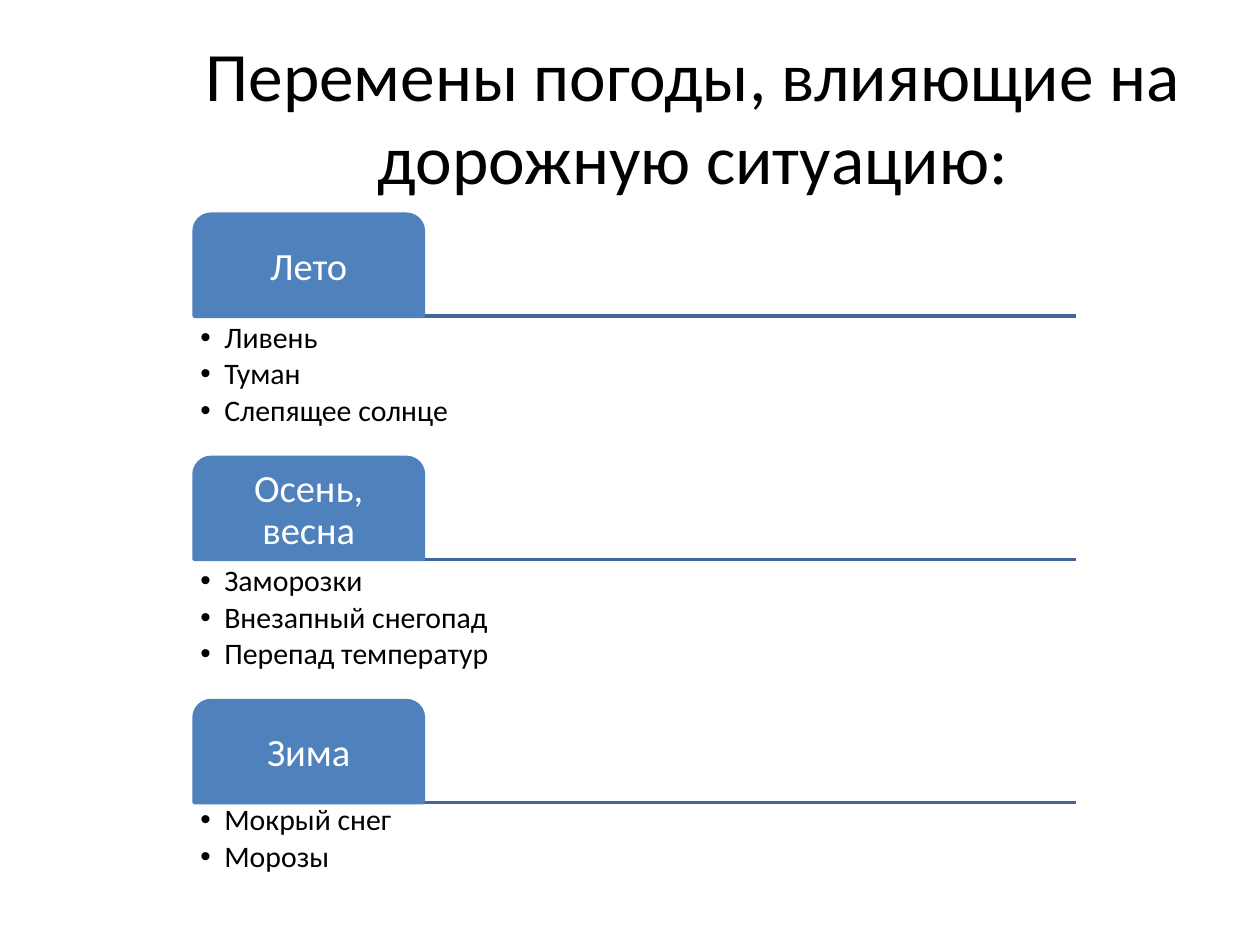
import pptx
import pptx.util
import pptx.dml.color
import pptx.enum.shapes
import pptx.enum.text
import pptx.oxml.xmlchemy
from lxml import etree
from pptx.oxml import ns

Inches, Pt = pptx.util.Inches, pptx.util.Pt
Color = pptx.dml.color.RGBColor.from_string
Align, Anchor = pptx.enum.text.PP_ALIGN, pptx.enum.text.MSO_ANCHOR

THEME = {
    "font": "Calibri", "text": "000000", "label": "FFFFFF",
    "tab": "4F81BD", "rule": "3F6797",
    "title_size": 39.6, "label_size": 22, "list_size": 17, "line": 2,
}

# Grid: one row per season, in inches
LEFT, TOP, ROW = 1.54, 1.7, 1.93
TAB_WIDTH, TAB_HEIGHT, RULE_WIDTH = 1.82, 0.81, 7
INSET, INDENT = 0.05, 0.19

# Label, list items, list width, list height, list shift from the rule
SEASONS = [
    ("Лето", ["Ливень", "Туман", "Слепящее солнце"], 7.01, 1.06, 0),
    ("Осень, весна", ["Заморозки", "Внезапный снегопад", "Перепад температур"], 7.01, 1.09, 0),
    ("Зима", ["Мокрый снег", "Морозы"], 6.38, 1, -0.03),
]


def place(shape, left, top, width, height):
    for name, value in zip(("left", "top", "width", "height"), (left, top, width, height)):
        setattr(shape, name, Inches(value))


def write(shape, lines, size, color, frame_format, para_format, bullet=False):
    frame = shape.text_frame
    frame.text = "\n".join(lines)
    frame_format = {"word_wrap": True, "auto_size": pptx.enum.text.MSO_AUTO_SIZE.NONE, **frame_format}
    for name, value in frame_format.items():
        setattr(frame, name, value)
    for para in frame.paragraphs:
        for name, value in {"space_before": Pt(0), **para_format}.items():
            setattr(para, name, value)
        if bullet:
            properties = para._p.get_or_add_pPr()
            properties.set("marL", str(Inches(INDENT)))
            properties.set("indent", str(-Inches(INDENT)))
            etree.SubElement(properties, ns.qn("a:buFont"), typeface="Arial")
            etree.SubElement(properties, ns.qn("a:buChar"), char="•")
        for span in para.runs:
            for name, value in {"name": THEME["font"], "size": Pt(size), "bold": False}.items():
                setattr(span.font, name, value)
            span.font.color.rgb = Color(color)


deck = pptx.Presentation()
deck.slide_width, deck.slide_height = Inches(10), Inches(7.5)
page = deck.slides.add_slide(deck.slide_layouts.get_by_name("Comparison"))
lists = [holder for holder in page.placeholders if holder.placeholder_format.idx in (1, 2, 3, 4)]
spare = lists.pop()
spare.element.getparent().remove(spare.element)

# Title
place(page.shapes.title, 1, 0.29, 9, 1.25)
write(page.shapes.title, ["Перемены погоды, влияющие на дорожную ситуацию:"],
      THEME["title_size"], THEME["text"],
      {"vertical_anchor": Anchor.MIDDLE}, {"alignment": Align.CENTER})

insets = {f"margin_{side}": Inches(INSET) for side in ("left", "top", "right", "bottom")}
for row, (label, items, width, height, shift) in enumerate(SEASONS):
    top = TOP + row * ROW
    base = top + TAB_HEIGHT

    # Rule under the season
    rule = page.shapes.add_connector(
        pptx.enum.shapes.MSO_CONNECTOR.STRAIGHT,
        Inches(LEFT), Inches(base), Inches(LEFT + RULE_WIDTH), Inches(base))
    rule.line.color.rgb = Color(THEME["rule"])
    rule.line.width = Pt(THEME["line"])
    etree.SubElement(rule._element.spPr, ns.qn("a:effectLst"))

    # Tab with the season name
    tab = page.shapes.add_shape(pptx.enum.shapes.MSO_SHAPE.ROUND_2_SAME_RECTANGLE, 0, 0, 0, 0)
    place(tab, LEFT, top, TAB_WIDTH, TAB_HEIGHT)
    tab.shadow.inherit = False
    tab.fill.solid()
    tab.fill.fore_color.rgb = tab.line.color.rgb = Color(THEME["tab"])
    tab.line.width = Pt(THEME["line"])
    write(tab, [label], THEME["label_size"], THEME["label"],
          {"vertical_anchor": Anchor.MIDDLE, **insets},
          {"alignment": Align.CENTER, "line_spacing": 0.9})

    # Weather list
    place(lists[row], LEFT, base + shift, width, height)
    write(lists[row], items, THEME["list_size"], THEME["text"],
          {"vertical_anchor": Anchor.TOP, **insets},
          {"alignment": Align.LEFT, "level": 1, "line_spacing": 0.9,
           "space_after": Pt(0.15 * THEME["list_size"])}, bullet=True)

deck.save("out.pptx")
